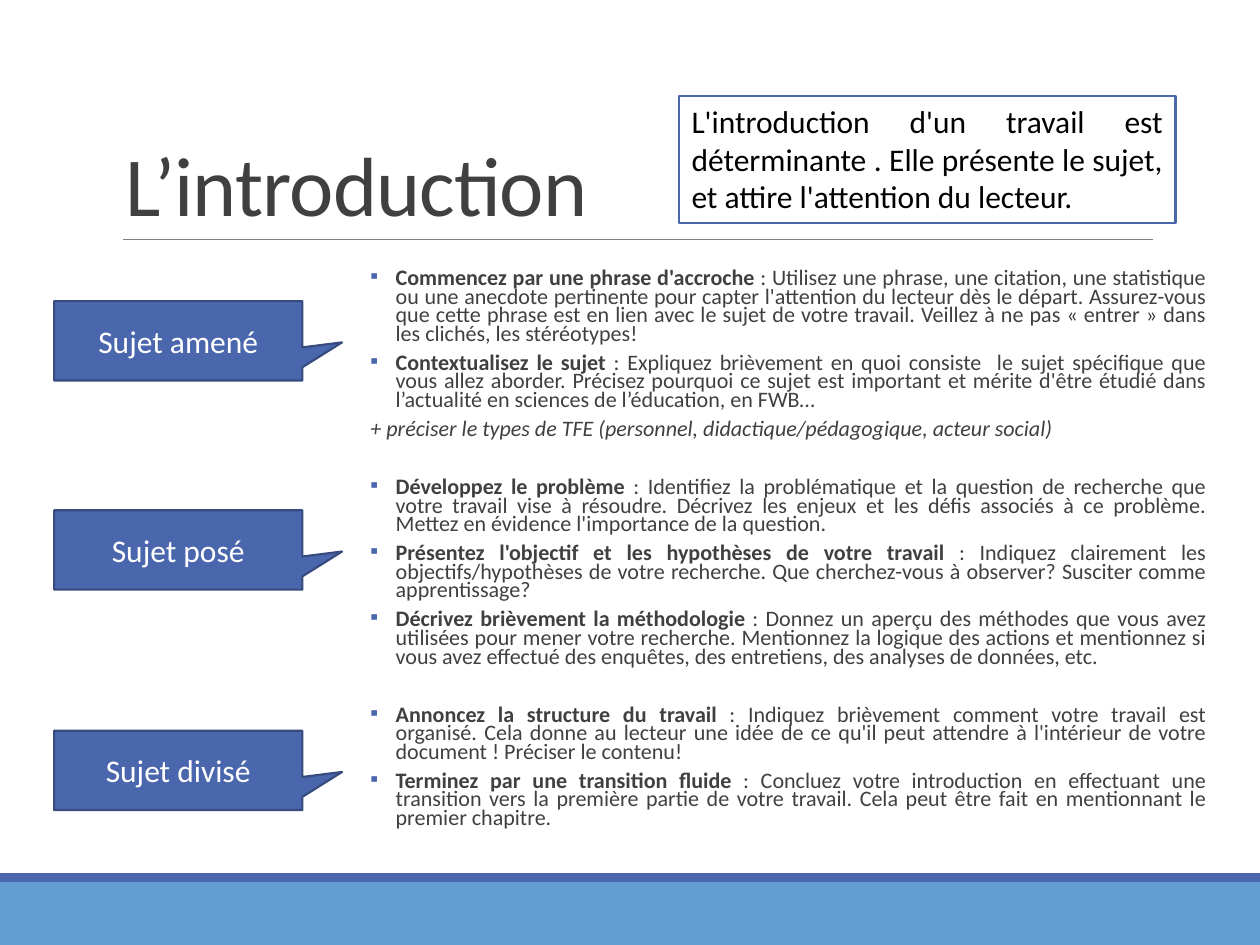
"""Build a slide on the three parts of an introduction."""

import dataclasses
import typing

import lxml.etree
import pptx
import pptx.dml.color
import pptx.enum.shapes
import pptx.enum.text
import pptx.oxml.ns
import pptx.util

RGB = pptx.dml.color.RGBColor
Pt = pptx.util.Pt
Align = pptx.enum.text.PP_ALIGN
Anchor = pptx.enum.text.MSO_ANCHOR
Kind = pptx.enum.shapes.MSO_SHAPE
qn = pptx.oxml.ns.qn

BLUE = RGB(0x4A, 0x66, 0xAC)
NAVY = RGB(0x37, 0x4B, 0x7F)
SKY = RGB(0x62, 0x9D, 0xD1)
GREY = RGB(0x80, 0x80, 0x80)
DARK = RGB(0x40, 0x40, 0x40)
BLACK = RGB(0x00, 0x00, 0x00)
WHITE = RGB(0xFF, 0xFF, 0xFF)

FACE = "Calibri"
WIDE = pptx.util.Inches(10)
HIGH = pptx.util.Inches(7.5)
GAP = 18.6


class Box(typing.NamedTuple):
    """Left, top, width and height in percent of the slide."""

    left: float
    top: float
    width: float
    height: float


@dataclasses.dataclass
class Point:
    """A paragraph of the body: bold lead, plain rest, space before."""

    lead: str
    rest: str
    before: float = 2


@dataclasses.dataclass
class Part:
    """A callout label and its top in percent."""

    label: str
    top: float


POINTS = [
    Point("Commencez par une phrase d'accroche",
          "Utilisez une phrase, une citation, une statistique ou une anecdote pertinente pour "
          "capter l'attention du lecteur dès le départ. Assurez-vous que cette phrase est en lien "
          "avec le sujet de votre travail. Veillez à ne pas « entrer » dans les clichés, les "
          "stéréotypes!"),
    Point("Contextualisez le sujet",
          "Expliquez brièvement en quoi consiste  le sujet spécifique que vous allez aborder. "
          "Précisez pourquoi ce sujet est important et mérite d'être étudié dans l’actualité en "
          "sciences de l’éducation, en FWB…"),
    Point("", "+ préciser le types de TFE (personnel, didactique/pédagogique, acteur social)"),
    Point("Développez le problème",
          "Identifiez la problématique et la question de recherche que votre travail vise à "
          "résoudre. Décrivez les enjeux et les défis associés à ce problème. Mettez en évidence "
          "l'importance de la question.", GAP),
    Point("Présentez l'objectif et les hypothèses de votre travail",
          "Indiquez clairement les objectifs/hypothèses de votre recherche. Que cherchez-vous à "
          "observer? Susciter comme apprentissage?"),
    Point("Décrivez brièvement la méthodologie",
          "Donnez un aperçu des méthodes que vous avez utilisées pour mener votre recherche. "
          "Mentionnez la logique des actions et mentionnez si vous avez effectué des enquêtes, "
          "des entretiens, des analyses de données, etc."),
    Point("Annoncez la structure du travail",
          "Indiquez brièvement comment votre travail est organisé. Cela donne au lecteur une idée "
          "de ce qu'il peut attendre à l'intérieur de votre document ! Préciser le contenu!", GAP),
    Point("Terminez par une transition fluide",
          "Concluez votre introduction en effectuant une transition vers la première partie de "
          "votre travail. Cela peut être fait en mentionnant le premier chapitre."),
]
PARTS = [Part("Sujet amené", 31.87), Part("Sujet posé", 54), Part("Sujet divisé", 77.33)]


def place(box: Box) -> list[int]:
    """Turn percent of the slide into lengths."""
    return [int(share * side / 100) for share, side in zip(box, (WIDE, HIGH) * 2)]


def style(para, size: float, color: RGB, align: Align) -> None:
    """Set the font and alignment of a paragraph."""
    para.alignment = align
    para.font.name = FACE
    para.font.size = Pt(size)
    para.font.color.rgb = color


def block(slide, kind: Kind, box: Box, fill: RGB, edge: typing.Optional[RGB] = None):
    """Draw a filled shape, outlined if an edge colour is given."""
    shape = slide.shapes.add_shape(kind, *place(box))
    shape.shadow.inherit = False
    shape.fill.solid()
    shape.fill.fore_color.rgb = fill
    if edge is None:
        shape.line.fill.background()
    else:
        shape.line.color.rgb = edge
        shape.line.width = Pt(1.25)
    return shape


def label(shape, text: str, color: RGB, align: Align, anchor: Anchor) -> None:
    """Write one paragraph in a shape."""
    frame = shape.text_frame
    frame.word_wrap = True
    frame.vertical_anchor = anchor
    para = frame.paragraphs[0]
    para.add_run().text = text
    style(para, 18, color, align)


def rule(slide, left: float, right: float, top: float) -> None:
    """Draw the thin line below the title."""
    start = place(Box(left, top, right, top))
    line = slide.shapes.add_connector(pptx.enum.shapes.MSO_CONNECTOR.STRAIGHT, *start)
    line.line.color.rgb = GREY
    line.line.width = Pt(0.5)
    lxml.etree.SubElement(line._element.spPr, qn("a:effectLst"))


def title(slide, box: Box, text: str) -> None:
    """Write the slide title."""
    frame = slide.shapes.add_textbox(*place(box)).text_frame
    frame.word_wrap = True
    frame.vertical_anchor = Anchor.BOTTOM
    para = frame.paragraphs[0]
    para.line_spacing = 0.85
    run = para.add_run()
    run.text = text
    run._r.get_or_add_rPr().set("spc", "-50")
    style(para, 48, DARK, Align.LEFT)


def indent(para, left: float, first: float) -> None:
    """Set the left margin and first-line indent in inches."""
    props = para._p.get_or_add_pPr()
    props.set("marL", str(pptx.util.Inches(left)))
    props.set("indent", str(pptx.util.Inches(first)))


def bullet(para) -> None:
    """Give a paragraph a blue square bullet."""
    props = para._p.get_or_add_pPr()
    color = lxml.etree.SubElement(props, qn("a:buClr"))
    lxml.etree.SubElement(color, qn("a:srgbClr"), val=str(BLUE))
    lxml.etree.SubElement(props, qn("a:buFont"), typeface=FACE)
    lxml.etree.SubElement(props, qn("a:buChar"), char="▪")


def body(slide, box: Box, points: list[Point]) -> None:
    """Write the advice as justified paragraphs."""
    frame = slide.shapes.add_textbox(*place(box)).text_frame
    frame.word_wrap = True
    frame.margin_left = frame.margin_right = 0
    for rank, point in enumerate(points):
        para = frame.add_paragraph() if rank else frame.paragraphs[0]
        para.line_spacing = 0.7
        para.space_before = Pt(point.before)
        para.space_after = Pt(4)
        if point.lead:
            indent(para, 0.42, -0.2)
            bullet(para)
            lead = para.add_run()
            lead.text = point.lead
            lead.font.bold = True
            para.add_run().text = " : " + point.rest
        else:
            indent(para, 0.22, 0)
            para.add_run().text = point.rest
            para.font.italic = True
        style(para, 12.6, DARK, Align.JUSTIFY)


def main() -> None:
    """Build and save the slide."""
    deck = pptx.Presentation()
    deck.slide_width, deck.slide_height = WIDE, HIGH
    slide = deck.slides.add_slide(deck.slide_layouts[6])
    block(slide, Kind.RECTANGLE, Box(0, 93.33, 100, 6.67), SKY)
    block(slide, Kind.RECTANGLE, Box(0, 92.4, 100, 0.93), BLUE)
    rule(slide, 9.8, 91.5, 25.33)
    title(slide, Box(9, 4.13, 82.5, 21.2), "L’introduction")
    body(slide, Box(27.2, 28, 68.5, 65.07), POINTS)
    for part in PARTS:
        shape = block(slide, Kind.RECTANGULAR_CALLOUT, Box(4.3, part.top, 19.7, 8.4), BLUE, NAVY)
        shape.adjustments[0], shape.adjustments[1] = 0.66, 0.02
        label(shape, part.label, WHITE, Align.CENTER, Anchor.MIDDLE)
    note = block(slide, Kind.RECTANGLE, Box(53.9, 10.13, 39.4, 13.47), WHITE, BLUE)
    label(note, "L'introduction d'un travail est déterminante . Elle présente le sujet, et attire "
          "l'attention du lecteur.", BLACK, Align.JUSTIFY, Anchor.TOP)
    deck.save("out.pptx")


if __name__ == "__main__":
    main()
